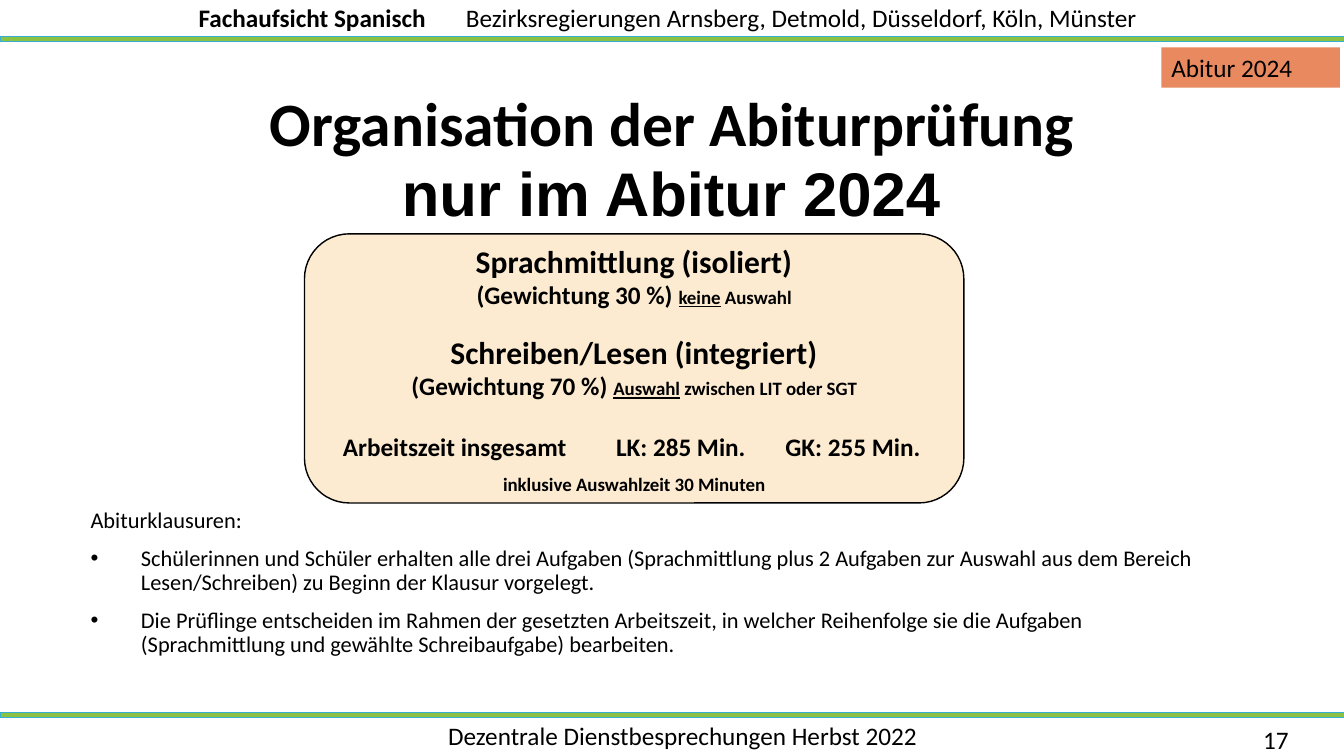
from dataclasses import dataclass

from lxml.etree import SubElement
from pptx import Presentation
from pptx.dml.color import RGBColor
from pptx.enum.shapes import MSO_SHAPE as Preset
from pptx.enum.text import MSO_ANCHOR as Anchor, PP_ALIGN as Align
from pptx.oxml.ns import qn
from pptx.util import Inches, Pt

COLORS = {
    "text": "000000",
    "band": "8BC145",
    "band_edge": "36AFCE",
    "tag": "E98960",
    "panel": "FCEBD1",
}
SLIDE_WIDTH = 13.33


@dataclass(frozen=True)
class Run:
    text: str
    size: float = 18
    bold: bool = False
    underline: bool = False
    font: str = "Calibri"


@dataclass(frozen=True)
class Paragraph:
    runs: tuple[Run, ...]
    align: Align = Align.LEFT
    line_spacing: float = 1.0
    space_before: float = 0
    bullet: bool = False
    tabs: tuple[float, ...] = ()


@dataclass(frozen=True)
class Box:
    left: float
    top: float
    width: float
    height: float
    paragraphs: tuple[Paragraph, ...]
    anchor: Anchor = Anchor.TOP
    margin_left: float = 0.1
    margin_right: float = 0.1


def rgb(name: str) -> RGBColor:
    return RGBColor.from_string(COLORS[name])


def lengths(*values: float) -> list[int]:
    return [Inches(value) for value in values]


def write_paragraph(target, content: Paragraph) -> None:
    target.alignment = content.align
    target.line_spacing = content.line_spacing
    target.space_before = Pt(content.space_before)
    properties = target._p.get_or_add_pPr()
    if content.bullet:
        properties.set("marL", str(Inches(0.5)))
        properties.set("indent", str(Inches(-0.5)))
        SubElement(properties, qn("a:buFont"), typeface="Arial")
        SubElement(properties, qn("a:buChar"), char="•")
    if content.tabs:
        tab_list = SubElement(properties, qn("a:tabLst"))
        for position in content.tabs:
            SubElement(tab_list, qn("a:tab"), pos=str(Inches(position)), algn="l")
    for part in content.runs:
        run = target.add_run()
        run.text = part.text
        run.font.name = part.font
        run.font.size = Pt(part.size)
        run.font.bold = part.bold
        run.font.underline = part.underline
        run.font.color.rgb = rgb("text")


def write_text(shape, box: Box) -> None:
    frame = shape.text_frame
    frame.word_wrap = True
    frame.vertical_anchor = box.anchor
    frame.margin_left = Inches(box.margin_left)
    frame.margin_right = Inches(box.margin_right)
    for index, content in enumerate(box.paragraphs):
        target = frame.add_paragraph() if index else frame.paragraphs[0]
        write_paragraph(target, content)


def add_text(slide, box: Box) -> None:
    place = lengths(box.left, box.top, box.width, box.height)
    write_text(slide.shapes.add_textbox(*place), box)


def add_filled(slide, preset: Preset, place: list[int], fill: str,
               edge: str | None = None, edge_width: float = 1):
    shape = slide.shapes.add_shape(preset, *place)
    shape.shadow.inherit = False
    shape.fill.solid()
    shape.fill.fore_color.rgb = rgb(fill)
    if edge:
        shape.line.color.rgb = rgb(edge)
        shape.line.width = Pt(edge_width)
    else:
        shape.line.fill.background()
    return shape


def add_filled_box(slide, preset: Preset, box: Box, fill: str, edge: str | None = None) -> None:
    place = lengths(box.left, box.top, box.width, box.height)
    write_text(add_filled(slide, preset, place, fill, edge), box)


def heading(text: str, font: str) -> tuple[Paragraph, ...]:
    return (Paragraph((Run(text, 44, True, font=font),), Align.CENTER, 0.9),)


def task(name: str, weight: str, choice: str, detail: str, gap: float) -> tuple[Paragraph, ...]:
    return (
        Paragraph((Run(name, 22.5, True),), Align.CENTER, space_before=gap),
        Paragraph((
            Run(f"(Gewichtung {weight} %) ", 18, True),
            Run(choice, 13.5, True, True),
            Run(f" {detail}", 13.5, True),
        ), Align.CENTER),
    )


def body(text: str, bullet: bool = True) -> Paragraph:
    return Paragraph((Run(text, 16),), line_spacing=0.9, space_before=10, bullet=bullet)


TITLE = Box(0.92, 0.88, 11.5, 0.92, heading("Organisation der Abiturprüfung", "Calibri"))
SUBTITLE = Box(0.52, 1.54, 12.28, 0.79, heading("nur im Abitur 2024", "Arial"), Anchor.BOTTOM)
HEADER = Box(-0.02, -0.03, 13.35, 0.4, (Paragraph((
    Run("Fachaufsicht Spanisch\t", bold=True),
    Run("Bezirksregierungen Arnsberg, Detmold, Düsseldorf, Köln, Münster"),
), tabs=(2.65,)),), margin_left=1.99)
FOOTER = Box(3.38, 7.1, 6.78, 0.4, (
    Paragraph((Run("Dezentrale Dienstbesprechungen Herbst 2022"),), Align.CENTER),
))
PAGE_NUMBER = Box(12.43, 7.14, 0.91, 0.4, (Paragraph((Run("17"),)),))
EXAM_TAG = Box(11.52, 0.47, 1.77, 0.4, (Paragraph((Run("Abitur 2024"),)),), Anchor.MIDDLE)
EXAM_NOTES = Box(0.8, 5, 11.39, 1.51, (
    body("Abiturklausuren:", bullet=False),
    body("Schülerinnen und Schüler erhalten alle drei Aufgaben (Sprachmittlung plus "
         "2 Aufgaben zur Auswahl aus dem Bereich Lesen/Schreiben) zu Beginn der "
         "Klausur vorgelegt."),
    body("Die Prüflinge entscheiden im Rahmen der gesetzten Arbeitszeit, in welcher "
         "Reihenfolge sie die Aufgaben (Sprachmittlung und gewählte Schreibaufgabe) "
         "bearbeiten."),
))
TASK_PANEL = Box(3.02, 2.32, 6.54, 2.67, (
    *task("Sprachmittlung (isoliert)", "30", "keine", "Auswahl", 0),
    *task("Schreiben/Lesen (integriert)", "70", "Auswahl", "zwischen LIT oder SGT", 16.5),
    Paragraph((Run("Arbeitszeit insgesamt\tLK: 285 Min.\tGK: 255 Min.", 18, True),),
              space_before=22, tabs=(2.71, 4.39)),
    Paragraph((Run("inklusive Auswahlzeit 30 Minuten", 13.5, True),),
              Align.CENTER, space_before=7.5),
), Anchor.MIDDLE, 0.25, 0.25)


def main() -> None:
    presentation = Presentation()
    presentation.slide_width, presentation.slide_height = lengths(SLIDE_WIDTH, 7.5)
    slide = presentation.slides.add_slide(presentation.slide_layouts[5])

    title = slide.shapes.title
    title.left, title.top, title.width, title.height = lengths(
        TITLE.left, TITLE.top, TITLE.width, TITLE.height)
    write_text(title, TITLE)

    for band_top in (0.36, 7.07):
        add_filled(slide, Preset.RECTANGLE, lengths(0, band_top, SLIDE_WIDTH, 0.05),
                   "band", "band_edge", 0.5)
    for box in (HEADER, FOOTER, PAGE_NUMBER, SUBTITLE, EXAM_NOTES):
        add_text(slide, box)
    add_filled_box(slide, Preset.RECTANGLE, EXAM_TAG, "tag")
    add_filled_box(slide, Preset.ROUNDED_RECTANGLE, TASK_PANEL, "panel", "text")

    presentation.save("out.pptx")


if __name__ == "__main__":
    main()
